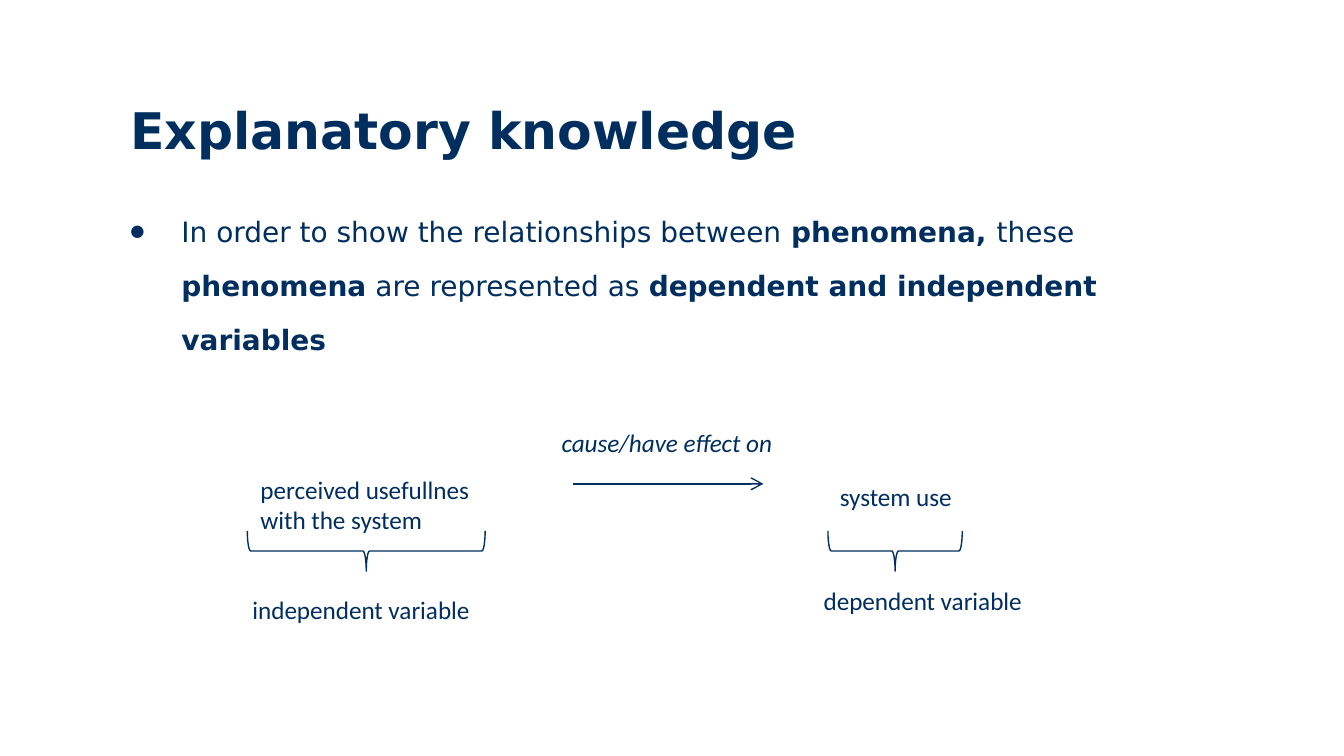
import pptx
import pptx.dml.color
import pptx.enum.shapes
import pptx.enum.text
import pptx.oxml.ns
import pptx.util
from lxml import etree
from pptx.util import Inches

NAVY = pptx.dml.color.RGBColor(0x00, 0x2F, 0x5F)
LINE = pptx.dml.color.RGBColor(0x00, 0x2E, 0x5D)


def add_run(p, text, size=13.5, font="Calibri", bold=False, italic=False, color=NAVY):
    """Append a formatted run to a paragraph."""
    r = p.add_run()
    r.text = text
    r.font.size = pptx.util.Pt(size)
    r.font.name = font
    r.font.bold = bold
    r.font.italic = italic
    r.font.color.rgb = color


def add_element(parent, tag, **attributes):
    """Append a DrawingML element to a parent element."""
    return etree.SubElement(parent, pptx.oxml.ns.qn(tag), **attributes)


class Slide:
    """Hold the heading style and the current slide."""

    font = "DejaVu Sans"
    line_width = pptx.util.Pt(0.75)

    def __init__(self, prs):
        """Add a title and content slide."""
        self.s = prs.slides.add_slide(prs.slide_layouts[1])

    def place(self, sp, left, top, width, height):
        """Move a placeholder and return its first paragraph."""
        sp.left, sp.top = Inches(left), Inches(top)
        sp.width, sp.height = Inches(width), Inches(height)
        tf = sp.text_frame
        tf.auto_size = pptx.enum.text.MSO_AUTO_SIZE.NONE
        tf.vertical_anchor = pptx.enum.text.MSO_ANCHOR.TOP
        p = tf.paragraphs[0]
        p.alignment = pptx.enum.text.PP_ALIGN.LEFT
        return p

    def title(self, text, *box):
        """Fill the title placeholder."""
        p = self.place(self.s.shapes.title, *box)
        add_run(p, text, size=27, font=self.font, bold=True)

    def bullet(self, parts, *box):
        """Fill the body with one bullet of (text, bold) parts."""
        p = self.place(self.s.placeholders[1], *box)
        pPr = p._p.get_or_add_pPr()
        pPr.set("marL", str(Inches(0.38)))
        pPr.set("indent", str(Inches(-0.38)))
        add_element(pPr, "a:buSzPct", val="58000")
        add_element(pPr, "a:buFont", typeface=self.font)
        add_element(pPr, "a:buChar", char="●")
        p.line_spacing = pptx.util.Pt(29)
        p.space_before = pptx.util.Pt(0)
        for text, bold in parts:
            add_run(p, text, size=15, font=self.font, bold=bold)

    def label(self, text, left, top, width, height=0.33, wrap=True, italic=False):
        """Add a text box."""
        sp = self.s.shapes.add_textbox(Inches(left), Inches(top), Inches(width), Inches(height))
        tf = sp.text_frame
        tf.word_wrap = wrap
        tf.auto_size = pptx.enum.text.MSO_AUTO_SIZE.SHAPE_TO_FIT_TEXT
        add_run(tf.paragraphs[0], text, italic=italic)

    def brace(self, left, top, width, height=0.3):
        """Add a brace pointing down that spans the given box."""
        sp = self.s.shapes.add_shape(
            pptx.enum.shapes.MSO_SHAPE.RIGHT_BRACE,
            Inches(left + (width - height) / 2), Inches(top + (height - width) / 2),
            Inches(height), Inches(width))
        sp.rotation = 90
        sp.shadow.inherit = False
        sp.fill.background()
        sp.line.color.rgb = LINE
        sp.line.width = self.line_width

    def arrow(self, x1, x2, y):
        """Add a horizontal arrow."""
        cxn = self.s.shapes.add_connector(
            pptx.enum.shapes.MSO_CONNECTOR.STRAIGHT,
            Inches(x1), Inches(y), Inches(x2), Inches(y))
        cxn.line.color.rgb = LINE
        cxn.line.width = self.line_width
        add_element(cxn.line._get_or_add_ln(), "a:tailEnd", type="arrow")
        add_element(cxn._element.spPr, "a:effectLst")


def main():
    """Build and save the slide."""
    prs = pptx.Presentation()
    prs.slide_width = Inches(10)
    prs.slide_height = prs.slide_width * 9 // 16
    slide = Slide(prs)
    slide.title("Explanatory knowledge", 0.87, 0.69, 7.49, 0.65)
    slide.bullet([
        ("In order to show the relationships between ", False),
        ("phenomena, ", True),
        ("these ", False),
        ("phenomena", True),
        (" are represented as ", False),
        ("dependent and independent variables", True),
    ], 0.87, 1.39, 8.5, 3.54)
    slide.arrow(4.26, 5.68, 3.6)
    slide.label("perceived usefullnes with the system", 1.84, 3.48, 1.83, height=0.56)
    slide.label("system use", 6.15, 3.53, 1.71)
    slide.brace(6.16, 3.95, 1)
    slide.brace(1.84, 3.95, 1.77)
    slide.label("independent variable", 1.78, 4.37, 2.19)
    slide.label("dependent variable", 6.03, 4.31, 2.24)
    slide.label("cause/have effect on", 4.08, 3.13, 1.8, wrap=False, italic=True)
    prs.save("out.pptx")


if __name__ == "__main__":
    main()
